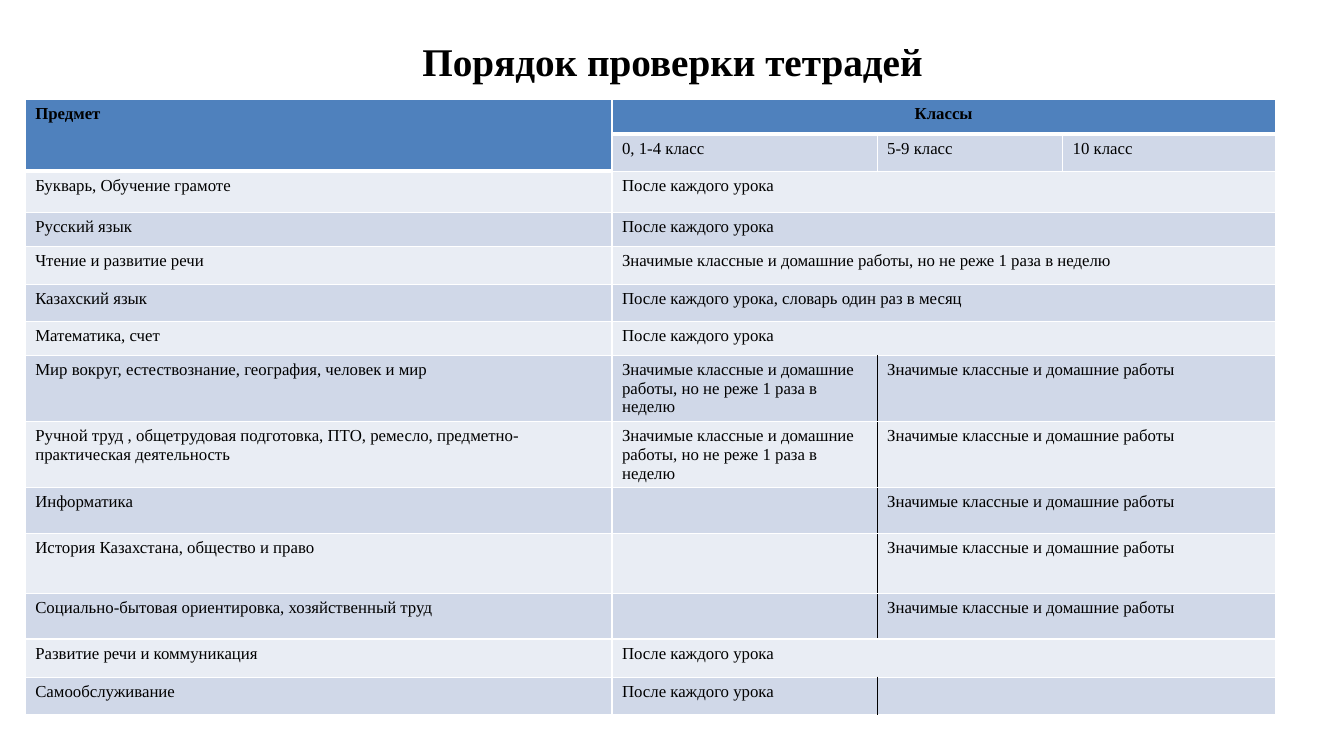
import dataclasses

import lxml.etree
import pptx
import pptx.dml.color
import pptx.enum.text
import pptx.oxml.ns
import pptx.util

Inches = pptx.util.Inches
Pt = pptx.util.Pt
ALIGN = pptx.enum.text.PP_ALIGN
ANCHOR = pptx.enum.text.MSO_ANCHOR


@dataclasses.dataclass(frozen=True)
class Theme:
    font: str = "Times New Roman"
    title_size: int = 28
    cell_size: int = 12
    ink: str = "000000"
    grid: str = "FFFFFF"
    header: str = "4F81BD"
    bands: tuple = ("E9EDF4", "D0D8E8")
    thin: int = 1
    thick: int = 3


def rgb(value):
    return pptx.dml.color.RGBColor.from_string(value)


def write_text(frame, text, *, theme, size, bold=False, align=ALIGN.LEFT):
    paragraph = frame.paragraphs[0]
    paragraph.alignment = align
    if not text:
        lxml.etree.SubElement(
            paragraph._p, pptx.oxml.ns.qn("a:endParaRPr"), sz=str(size * 100)
        )
        return
    run = paragraph.add_run()
    run.text = text
    run.font.name = theme.font
    run.font.size = Pt(size)
    run.font.bold = bold
    run.font.color.rgb = rgb(theme.ink)


class SlideBuilder:
    def __init__(self, deck, theme):
        self.theme = theme
        self.slide = deck.slides.add_slide(deck.slide_layouts[5])

    def title(self, text, left, top, width, height):
        heading = self.slide.shapes.title
        heading.left, heading.top = Inches(left), Inches(top)
        heading.width, heading.height = Inches(width), Inches(height)
        heading.text_frame.vertical_anchor = ANCHOR.MIDDLE
        write_text(heading.text_frame, text, theme=self.theme,
                   size=self.theme.title_size, bold=True, align=ALIGN.CENTER)

    def table(self, left, top, widths, heights):
        grid = self.slide.shapes.add_table(
            len(heights), len(widths), Inches(left), Inches(top),
            Inches(sum(widths)), Inches(sum(heights))
        ).table
        for column, width in zip(grid.columns, widths):
            column.width = Inches(width)
        for row, height in zip(grid.rows, heights):
            row.height = Inches(height)
        return grid

    def paint_cell(self, cell, fill, edges):
        properties = cell._tc.get_or_add_tcPr()
        for side in "LRTB":
            color, weight = edges.get(side, (self.theme.grid, self.theme.thin))
            line = lxml.etree.SubElement(
                properties, pptx.oxml.ns.qn(f"a:ln{side}"), w=str(Pt(weight))
            )
            solid = lxml.etree.SubElement(line, pptx.oxml.ns.qn("a:solidFill"))
            lxml.etree.SubElement(solid, pptx.oxml.ns.qn("a:srgbClr"), val=color)
        cell.fill.solid()
        cell.fill.fore_color.rgb = rgb(fill)

    def cell_text(self, cell, text, **text_format):
        write_text(cell.text_frame, text, theme=self.theme,
                   size=self.theme.cell_size, **text_format)


EVERY_LESSON = "После каждого урока"
KEY_WORKS = "Значимые классные и домашние работы"
WEEKLY = KEY_WORKS + ", но не реже 1 раза в неделю"

GRADES = ("0, 1-4 класс", "5-9 класс", "10 класс")
SUBJECTS = [
    ("Букварь, Обучение грамоте", EVERY_LESSON, None),
    ("Русский язык", EVERY_LESSON, None),
    ("Чтение и развитие речи", WEEKLY, None),
    ("Казахский язык", EVERY_LESSON + ", словарь один раз в месяц", None),
    ("Математика, счет", EVERY_LESSON, None),
    ("Мир вокруг, естествознание, география, человек и мир", WEEKLY, KEY_WORKS),
    ("Ручной труд , общетрудовая подготовка, ПТО, ремесло, "
     "предметно-практическая деятельность", WEEKLY, KEY_WORKS),
    ("Информатика", "", KEY_WORKS),
    ("История Казахстана, общество и право", "", KEY_WORKS),
    ("Социально-бытовая ориентировка, хозяйственный труд", "", KEY_WORKS),
    ("Развитие речи и коммуникация", EVERY_LESSON, None),
    ("Самообслуживание", EVERY_LESSON, ""),
]
COLUMN_WIDTHS = (5.82, 2.63, 1.84, 2.11)
ROW_HEIGHTS = (0.34, 0.37, 0.41, 0.34, 0.37, 0.37, 0.34,
               0.65, 0.65, 0.45, 0.6, 0.45, 0.38, 0.37)


def fill_header(builder, schedule):
    theme = builder.theme
    heavy = (theme.grid, theme.thick)
    for column in range(len(COLUMN_WIDTHS)):
        builder.paint_cell(schedule.cell(0, column), theme.header, {"B": heavy})
        if column:
            builder.paint_cell(schedule.cell(1, column), theme.bands[1], {"T": heavy})
        else:
            builder.paint_cell(schedule.cell(1, 0), theme.header, {"B": heavy})
    schedule.cell(0, 0).merge(schedule.cell(1, 0))
    schedule.cell(0, 1).merge(schedule.cell(0, 3))
    builder.cell_text(schedule.cell(0, 0), "Предмет", bold=True)
    builder.cell_text(schedule.cell(0, 1), "Классы", bold=True, align=ALIGN.CENTER)
    for column, grade in enumerate(GRADES, start=1):
        builder.cell_text(schedule.cell(1, column), grade)


def fill_subjects(builder, schedule):
    theme = builder.theme
    divider = (theme.ink, theme.thin)
    for row, (subject, junior, senior) in enumerate(SUBJECTS, start=2):
        split = senior is not None
        edges = {1: {"R": divider}, 2: {"L": divider}} if split else {}
        for column in range(len(COLUMN_WIDTHS)):
            cell_edges = dict(edges.get(column, {}))
            if row == 2 and column == 0:
                cell_edges["T"] = (theme.grid, theme.thick)
            builder.paint_cell(schedule.cell(row, column), theme.bands[row % 2], cell_edges)
        schedule.cell(row, 2 if split else 1).merge(schedule.cell(row, 3))
        builder.cell_text(schedule.cell(row, 0), subject)
        builder.cell_text(schedule.cell(row, 1), junior)
        if split:
            builder.cell_text(schedule.cell(row, 2), senior)


def main():
    deck = pptx.Presentation()
    deck.slide_width, deck.slide_height = Inches(13.33), Inches(7.5)
    builder = SlideBuilder(deck, Theme())
    builder.title("Порядок проверки тетрадей", 0.67, 0.24, 12, 0.73)
    schedule = builder.table(0.25, 0.99, COLUMN_WIDTHS, ROW_HEIGHTS)
    fill_header(builder, schedule)
    fill_subjects(builder, schedule)
    deck.save("out.pptx")


if __name__ == "__main__":
    main()
